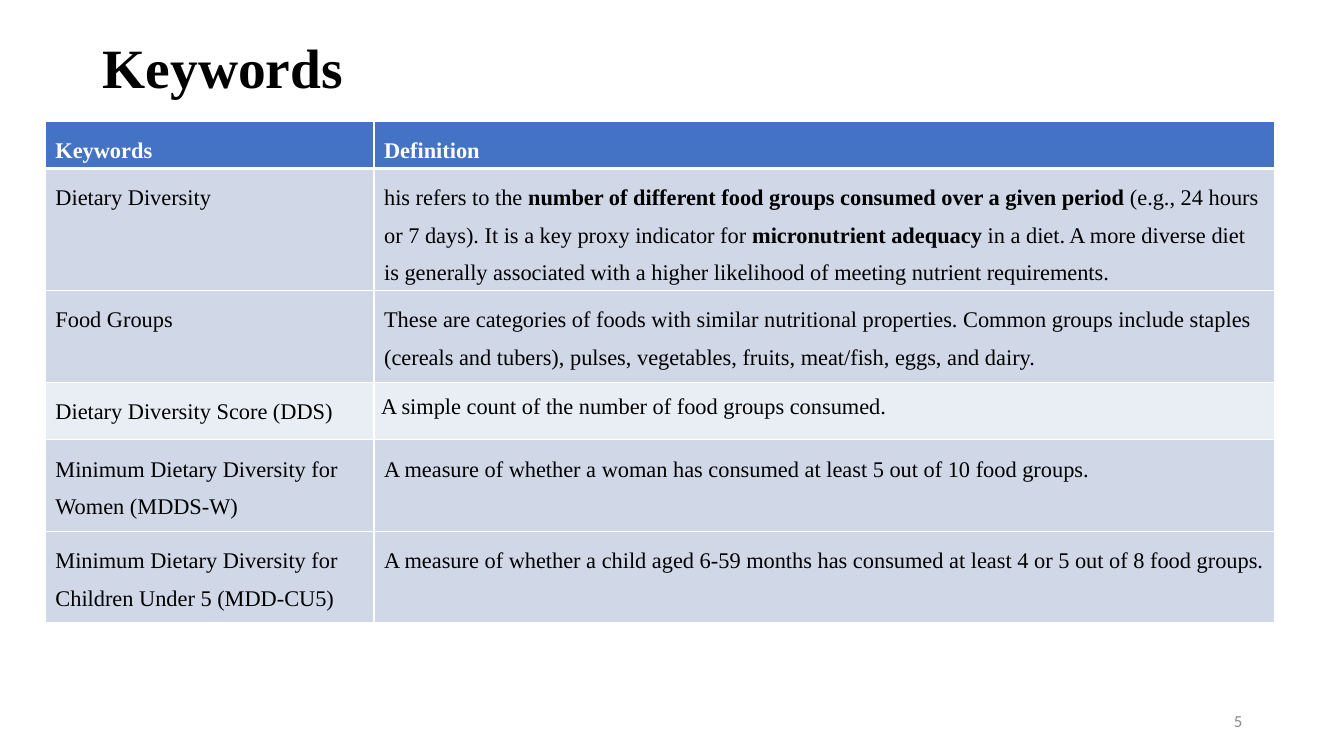
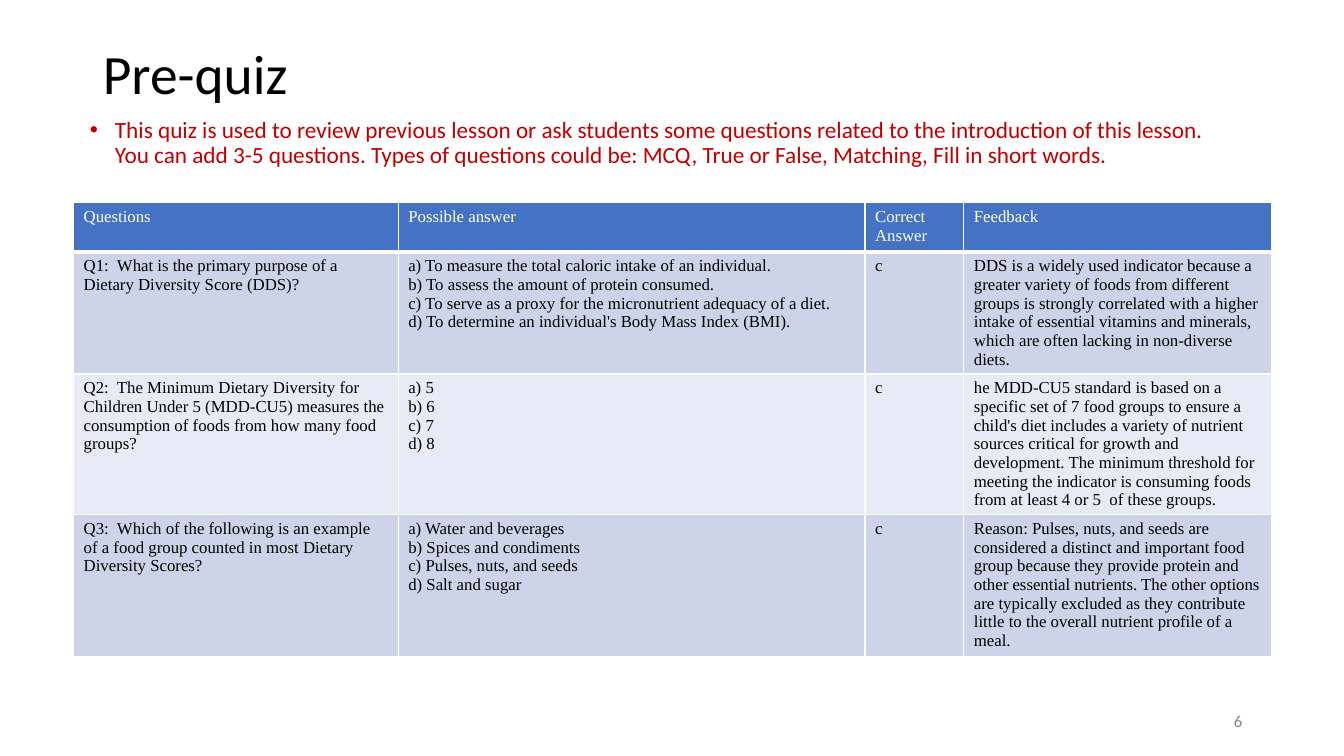
from dataclasses import dataclass

from lxml import etree
from pptx import Presentation
from pptx import util as u
from pptx.dml import color
from pptx.enum import text
from pptx.oxml import ns


@dataclass(frozen=True)
class Theme:
    sans: str = "Calibri"
    serif: str = "Times New Roman"
    black: str = "000000"
    white: str = "FFFFFF"
    grey: str = "888888"
    red: str = "C00000"
    header: str = "4472C4"
    title_size: float = 39.6
    body_size: float = 16.6
    keyword_size: float = 16
    small_size: float = 12
    thin: float = 1
    thick: float = 3


THEME = Theme()
LEFT, RIGHT, JUSTIFY = (text.PP_ALIGN.LEFT, text.PP_ALIGN.RIGHT,
                        text.PP_ALIGN.JUSTIFY)
TOP, MIDDLE = text.MSO_ANCHOR.TOP, text.MSO_ANCHOR.MIDDLE
INSETS = (0.1, 0.05)


def assign(target, values):
    for name, value in values.items():
        setattr(target, name, value)


def add_xml(parent, tag, **attributes):
    element = etree.SubElement(parent, ns.qn(tag))
    for name, value in attributes.items():
        element.set(name, str(value))
    return element


class Deck:
    def __init__(self, theme):
        self.theme = theme
        self.presentation = Presentation()
        assign(self.presentation, {"slide_width": u.Inches(13.33),
                                   "slide_height": u.Inches(7.5)})
        self.slide = None

    def add_slide(self, layout, number):
        layouts = self.presentation.slide_layouts
        self.slide = self.presentation.slides.add_slide(
            layouts.get_by_name(layout))
        box = self.slide.shapes.add_textbox(
            *map(u.Inches, (9.42, 6.95, 3, 0.4)))
        self.frame(box.text_frame, MIDDLE)
        self.fill_text(box.text_frame, str(number), self.theme.sans,
                       self.theme.small_size, self.theme.grey, align=RIGHT)

    def place(self, shape, left, top, width, height):
        assign(shape, {"left": u.Inches(left), "top": u.Inches(top),
                       "width": u.Inches(width), "height": u.Inches(height)})

    def frame(self, frame, anchor):
        across, down = map(u.Inches, INSETS)
        assign(frame, {"word_wrap": True, "vertical_anchor": anchor,
                       "auto_size": text.MSO_AUTO_SIZE.NONE,
                       "margin_left": across, "margin_right": across,
                       "margin_top": down, "margin_bottom": down})

    def fill_text(self, frame, content, font, size, ink, bold=False,
                  align=LEFT, spacing=1.0, bullet=False):
        for index, line in enumerate(content.split("\n")):
            paragraph = (frame.add_paragraph() if index
                         else frame.paragraphs[0])
            if bullet:
                self.bullet(paragraph, ink)
            assign(paragraph, {"alignment": align, "line_spacing": spacing,
                               "space_before": u.Pt(0)})
            for part, words in enumerate(line.split("**")):
                run = paragraph.add_run()
                run.text = words
                assign(run.font, {"name": font, "size": u.Pt(size),
                                  "bold": bold or part % 2 == 1})
                run.font.color.rgb = color.RGBColor.from_string(ink)

    def bullet(self, paragraph, ink):
        properties = paragraph._p.get_or_add_pPr()
        indent = u.Inches(0.25)
        properties.set("marL", str(indent))
        properties.set("indent", str(-indent))
        add_xml(add_xml(properties, "a:buClr"), "a:srgbClr", val=ink)
        add_xml(properties, "a:buFont", typeface="Arial")
        add_xml(properties, "a:buChar", char="•")

    def title(self, content, height, font, bold=False):
        shape = self.slide.shapes.title
        self.place(shape, 0.92, 0.4, 11.5, height)
        self.frame(shape.text_frame, MIDDLE)
        self.fill_text(shape.text_frame, content, font,
                       self.theme.title_size, self.theme.black, bold,
                       spacing=0.9)

    def body(self, content):
        shape = self.slide.placeholders[1]
        self.place(shape, 0.79, 1.12, 11.5, 0.72)
        self.frame(shape.text_frame, TOP)
        self.fill_text(shape.text_frame, content, self.theme.sans,
                       self.theme.body_size, self.theme.red,
                       spacing=0.9, bullet=True)

    def borders(self, cell, row):
        properties = cell._tc.get_or_add_tcPr()
        thick_side = {0: "B", 1: "T"}.get(row)
        for side in "LRTB":
            weight = (self.theme.thick if side == thick_side
                      else self.theme.thin)
            line = add_xml(properties, f"a:ln{side}", w=u.Pt(weight))
            add_xml(add_xml(line, "a:solidFill"), "a:srgbClr",
                    val=self.theme.white)

    def table(self, left, top, columns, heights, fills, rows, size,
              spacing=1.0, bold_header=False, special=None):
        shape = self.slide.shapes.add_table(
            len(rows), len(columns), u.Inches(left), u.Inches(top),
            u.Inches(sum(columns)), u.Inches(sum(heights)))
        table = shape.table
        for column, width in zip(table.columns, columns):
            column.width = u.Inches(width)
        for index, (row, height) in enumerate(zip(table.rows, heights)):
            row.height = u.Inches(height)
            header = index == 0
            ink = self.theme.white if header else self.theme.black
            for position, content in enumerate(rows[index]):
                cell = table.cell(index, position)
                align, insets = (special or {}).get(
                    (index, position), (LEFT, INSETS))
                across, down = map(u.Inches, insets)
                assign(cell, {"margin_left": across, "margin_right": across,
                              "margin_top": down, "margin_bottom": down,
                              "vertical_anchor": TOP})
                self.borders(cell, index)
                cell.fill.solid()
                cell.fill.fore_color.rgb = color.RGBColor.from_string(
                    fills[index])
                self.fill_text(cell.text_frame, content, self.theme.serif,
                               size, ink, header and bold_header, align,
                               spacing)


KEYWORDS = [
    ("Keywords", "Definition"),
    ("Dietary Diversity",
     "his refers to the **number of different food groups consumed over a "
     "given period** (e.g., 24 hours or 7 days). It is a key proxy indicator "
     "for **micronutrient adequacy** in a diet. A more diverse diet is "
     "generally associated with a higher likelihood of meeting nutrient "
     "requirements."),
    ("Food Groups",
     "These are categories of foods with similar nutritional properties. "
     "Common groups include staples (cereals and tubers), pulses, "
     "vegetables, fruits, meat/fish, eggs, and dairy."),
    ("Dietary Diversity Score (DDS)",
     "A simple count of the number of food groups consumed."),
    ("Minimum Dietary Diversity for Women (MDDS-W)",
     "A measure of whether a woman has consumed at least 5 out of 10 food "
     "groups."),
    ("Minimum Dietary Diversity for\nChildren Under 5 (MDD-CU5)",
     "A measure of whether a child aged 6-59 months has consumed at least 4 "
     "or 5 out of 8 food groups."),
]

QUIZ = [
    ("Questions", "Possible answer", "Correct Answer", "Feedback"),
    ("Q1:  What is the primary purpose of a Dietary Diversity Score (DDS)?",
     "a) To measure the total caloric intake of an individual.\n"
     "b) To assess the amount of protein consumed.\n"
     "c) To serve as a proxy for the micronutrient adequacy of a diet.\n"
     "d) To determine an individual's Body Mass Index (BMI).",
     "c",
     "DDS is a widely used indicator because a greater variety of foods from "
     "different groups is strongly correlated with a higher intake of "
     "essential vitamins and minerals, which are often lacking in "
     "non-diverse diets."),
    ("Q2:  The Minimum Dietary Diversity for Children Under 5 (MDD-CU5) "
     "measures the consumption of foods from how many food groups?",
     "a) 5\nb) 6\nc) 7\nd) 8",
     "c",
     "he MDD-CU5 standard is based on a specific set of 7 food groups to "
     "ensure a child's diet includes a variety of nutrient sources critical "
     "for growth and development. The minimum threshold for meeting the "
     "indicator is consuming foods from at least 4 or 5  of these groups."),
    ("Q3:  Which of the following is an example of a food group counted in "
     "most Dietary\nDiversity Scores?",
     "a) Water and beverages\nb) Spices and condiments\n"
     "c) Pulses, nuts, and seeds\nd) Salt and sugar",
     "c",
     "Reason: Pulses, nuts, and seeds are considered a distinct and "
     "important food group because they provide protein and other essential "
     "nutrients. The other options are typically excluded as they contribute "
     "little to the overall nutrient profile of a meal."),
]


def main():
    deck = Deck(THEME)

    deck.add_slide("Title Only", 5)
    deck.title("Keywords", 0.6, THEME.serif, bold=True)
    dark, light = "D0D8E8", "E9EDF4"
    deck.table(0.45, 1.2, (3.26, 8.93), (0.46, 1.21, 0.91, 0.57, 0.91, 0.91),
               (THEME.header, dark, dark, light, dark, dark), KEYWORDS,
               THEME.keyword_size, spacing=1.5, bold_header=True,
               special={(3, 1): (JUSTIFY, (0.07, 0))})

    deck.add_slide("Title and Content", 6)
    deck.title("Pre-quiz", 0.72, THEME.sans)
    deck.body("This quiz is used to review previous lesson or ask students "
              "some questions related to the introduction of this lesson. "
              "You can add 3-5 questions. Types of questions could be: MCQ, "
              "True or False, Matching, Fill in short words.")
    dark, light = "CDD4EA", "E8EBF5"
    deck.table(0.73, 2.01, (3.22, 4.63, 0.98, 3.05), (0.49, 1.2, 1.39, 1.41),
               (THEME.header, dark, light, dark), QUIZ, THEME.small_size)

    deck.presentation.save("out.pptx")


if __name__ == "__main__":
    main()
